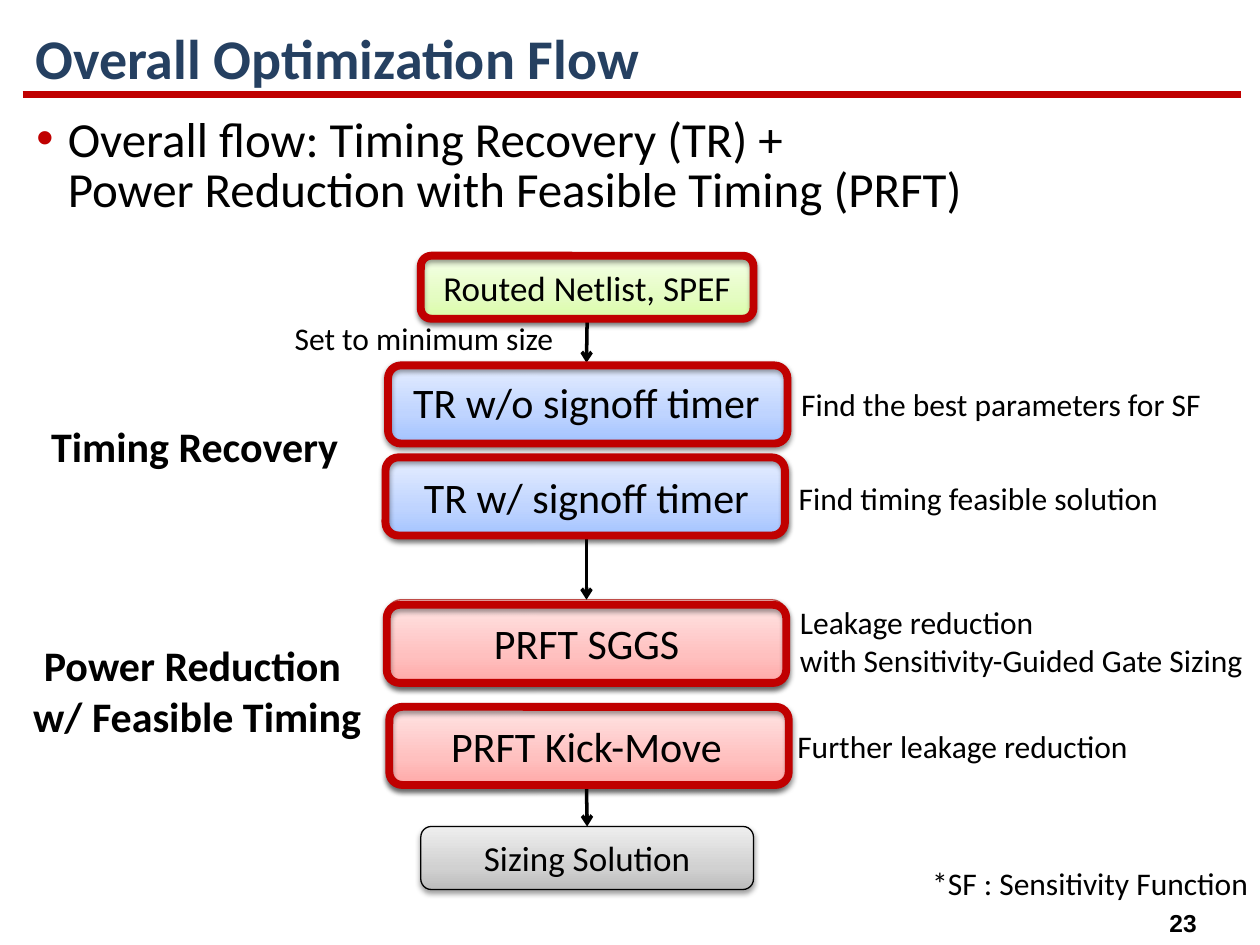
from copy import deepcopy

from pptx import Presentation
from pptx.dml.color import RGBColor
from pptx.enum.shapes import MSO_CONNECTOR, MSO_SHAPE
from pptx.enum.text import MSO_ANCHOR as ANCHOR, MSO_AUTO_SIZE as AUTO_SIZE, PP_ALIGN as ALIGN
from pptx.oxml.ns import qn
from pptx.util import Inches, Pt
from lxml.etree import SubElement

BLACK, RED, NAVY = "000000", "C00000", "254061"

TITLE = "Overall Optimization Flow"
SUMMARY = "Overall flow: Timing Recovery (TR) +\nPower Reduction with Feasible Timing (PRFT)"

# Gradient colours from bottom to top, then the outline
GREEN = ("DAFDA7", "E4FCC2", "F5FFE7", "98B955")
BLUE = ("A4C4FF", "BFD4FF", "E6EEFF", "4B7EBC")
PINK = ("FFA6A5", "FFC0BF", "FFE7E7", "BF4C48")
GRAY = ("BDBDBD", "D1D1D1", "EEEEEE", BLACK)
GRADIENT_POSITIONS = (0, 0.35, 1)

END_BOX = (3.34, 2.64, 20)  # left, width, text size
STEP_BOX = (3.07, 3.17, 24)

# key: text, kind, top, height, palette
STEPS = {
    "input": ("Routed Netlist, SPEF", END_BOX, 2.03, 0.5, GREEN),
    "tr_fast": ("TR w/o signoff timer", STEP_BOX, 2.88, 0.62, BLUE),
    "output": ("Sizing Solution", END_BOX, 6.56, 0.5, GRAY),
    "tr_signoff": ("TR w/ signoff timer", STEP_BOX, 3.63, 0.62, BLUE),
    "sggs": ("PRFT SGGS", STEP_BOX, 4.76, 0.68, PINK),
    "kick_move": ("PRFT Kick-Move", STEP_BOX, 5.59, 0.66, PINK),
}
ARROWS = [("input", "tr_fast"), ("tr_signoff", "sggs"), ("kick_move", "output")]

# left, top, width, height
HIGHLIGHTS = [
    (3.08, 2.9, 3.17, 0.62),
    (3.06, 3.63, 3.17, 0.62),
    (3.07, 4.8, 3.17, 0.62),
    (3.09, 5.61, 3.17, 0.62),
    (3.34, 2.03, 2.64, 0.5),
]
PHASES = [
    (["Timing Recovery"], (0.05, 3.29, 2.99, 0.5)),
    (["Power Reduction ", "w/ Feasible Timing"], (0.07, 5.03, 2.99, 0.91)),
]
NOTES = [
    ("Set to minimum size", (2.24, 2.48, 2.32, 0.4)),
    ("Find the best parameters for SF", (6.26, 3.01, 3.41, 0.4)),
    ("Find timing feasible solution", (6.24, 3.75, 3.09, 0.4)),
    ("Leakage reduction\nwith Sensitivity-Guided Gate Sizing", (6.25, 4.74, 3.75, 0.71)),
    ("Further leakage reduction", (6.23, 5.72, 2.86, 0.4)),
    ("*SF : Sensitivity Function", (7.3, 6.81, 2.74, 0.4)),
]


def color(value):
    return RGBColor.from_string(value)


def place(box):
    return [Inches(value) for value in box]


def write(frame, paragraphs, size, bold=False, align=ALIGN.LEFT, font="Calibri", ink=BLACK):
    for index, text in enumerate(paragraphs):
        paragraph = frame.add_paragraph() if index else frame.paragraphs[0]
        paragraph.text = text
        paragraph.alignment = align
        paragraph.font.name = font
        paragraph.font.size = Pt(size)
        paragraph.font.bold = bold
        paragraph.font.color.rgb = color(ink)


def add_text(slide, box, paragraphs, size, wrap=False, grow=True, **style):
    frame = slide.shapes.add_textbox(*place(box)).text_frame
    frame.word_wrap = wrap
    frame.auto_size = AUTO_SIZE.SHAPE_TO_FIT_TEXT if grow else AUTO_SIZE.NONE
    write(frame, paragraphs, size, **style)
    return frame


def add_rounded_box(slide, box, outline, weight):
    """Add an unfilled rounded rectangle with a soft shadow below it."""
    shape = slide.shapes.add_shape(MSO_SHAPE.ROUNDED_RECTANGLE, *place(box))
    shape.fill.background()
    shape.line.color.rgb = color(outline)
    shape.line.width = Pt(weight)
    shape.shadow.inherit = False
    effects = shape.element.spPr.find(qn("a:effectLst"))
    shadow = SubElement(effects, qn("a:outerShdw"), blurRad=str(Pt(3.1)),
                        dist=str(Pt(1.6)), dir="5400000", rotWithShape="0")
    ink = SubElement(shadow, qn("a:srgbClr"), val=BLACK)
    SubElement(ink, qn("a:alpha"), val="38000")
    return shape


def fill_gradient(shape, colors):
    shape.fill.gradient()
    shape.fill.gradient_angle = 90
    stops = shape.element.spPr.find(qn("a:gradFill")).find(qn("a:gsLst"))
    stops.insert(1, deepcopy(stops[0]))
    for stop, position, value in zip(shape.fill.gradient_stops, GRADIENT_POSITIONS, colors):
        stop.position = position
        stop.color.rgb = color(value)


def add_step(slide, text, kind, top, height, palette):
    left, width, size = kind
    *gradient, outline = palette
    shape = add_rounded_box(slide, (left, top, width, height), outline, 0.75)
    fill_gradient(shape, gradient)
    shape.text_frame.word_wrap = False
    shape.text_frame.vertical_anchor = ANCHOR.MIDDLE
    write(shape.text_frame, [text], size, align=ALIGN.CENTER)
    return shape


def add_line(slide, ends, ink, weight):
    connector = slide.shapes.add_connector(MSO_CONNECTOR.STRAIGHT, *place(ends))
    connector.line.color.rgb = color(ink)
    connector.line.width = Pt(weight)
    SubElement(connector.element.spPr, qn("a:effectLst"))
    return connector


def add_arrow(slide, start, end):
    connector = add_line(slide, (0, 0, 0, 0), BLACK, 2)
    connector.begin_connect(start, 2)
    connector.end_connect(end, 0)
    SubElement(connector.line._get_or_add_ln(), qn("a:tailEnd"), type="arrow")


def add_title(slide):
    title = slide.shapes.title
    title.left, title.top, title.width, title.height = place((0.18, 0.16, 9.68, 0.65))
    title.text_frame.vertical_anchor = ANCHOR.MIDDLE
    write(title.text_frame, [TITLE], 32, bold=True, ink=NAVY)
    title.text_frame.paragraphs[0].line_spacing = 0.9


def add_summary(slide):
    frame = add_text(slide, (0.19, 0.88, 9.66, 1.1), [SUMMARY], 28, wrap=True, grow=False)
    paragraph = frame.paragraphs[0]
    paragraph.line_spacing = 0.85
    paragraph.space_before = Pt(8.4)
    properties = paragraph._p.get_or_add_pPr()
    properties.set("marL", str(Inches(0.25)))
    properties.set("indent", str(-Inches(0.25)))
    bullet_color = SubElement(properties, qn("a:buClr"))
    SubElement(bullet_color, qn("a:srgbClr"), val=RED)
    SubElement(properties, qn("a:buFont"), typeface="Arial")
    SubElement(properties, qn("a:buChar"), char="•")
    # Bullet settings come before the default run properties
    properties.append(properties.find(qn("a:defRPr")))


def main():
    presentation = Presentation()
    presentation.slide_width, presentation.slide_height = Inches(10), Inches(7.5)
    slide = presentation.slides.add_slide(presentation.slide_layouts[5])

    add_line(slide, (0.18, 0.75, 9.85, 0.75), RED, 4.5)
    add_text(slide, (9.17, 7.16, 0.44, 0.34), ["23"], 14, bold=True,
             align=ALIGN.CENTER, font="Arial")
    add_title(slide)
    add_summary(slide)

    boxes = {key: add_step(slide, *step) for key, step in STEPS.items()}
    for start, end in ARROWS:
        add_arrow(slide, boxes[start], boxes[end])
    for lines, box in PHASES:
        add_text(slide, box, lines, 24, wrap=True, bold=True, align=ALIGN.CENTER)
    for text, box in NOTES:
        add_text(slide, box, [text], 18)
    for box in HIGHLIGHTS:
        add_rounded_box(slide, box, RED, 4.5)

    presentation.save("out.pptx")


if __name__ == "__main__":
    main()
